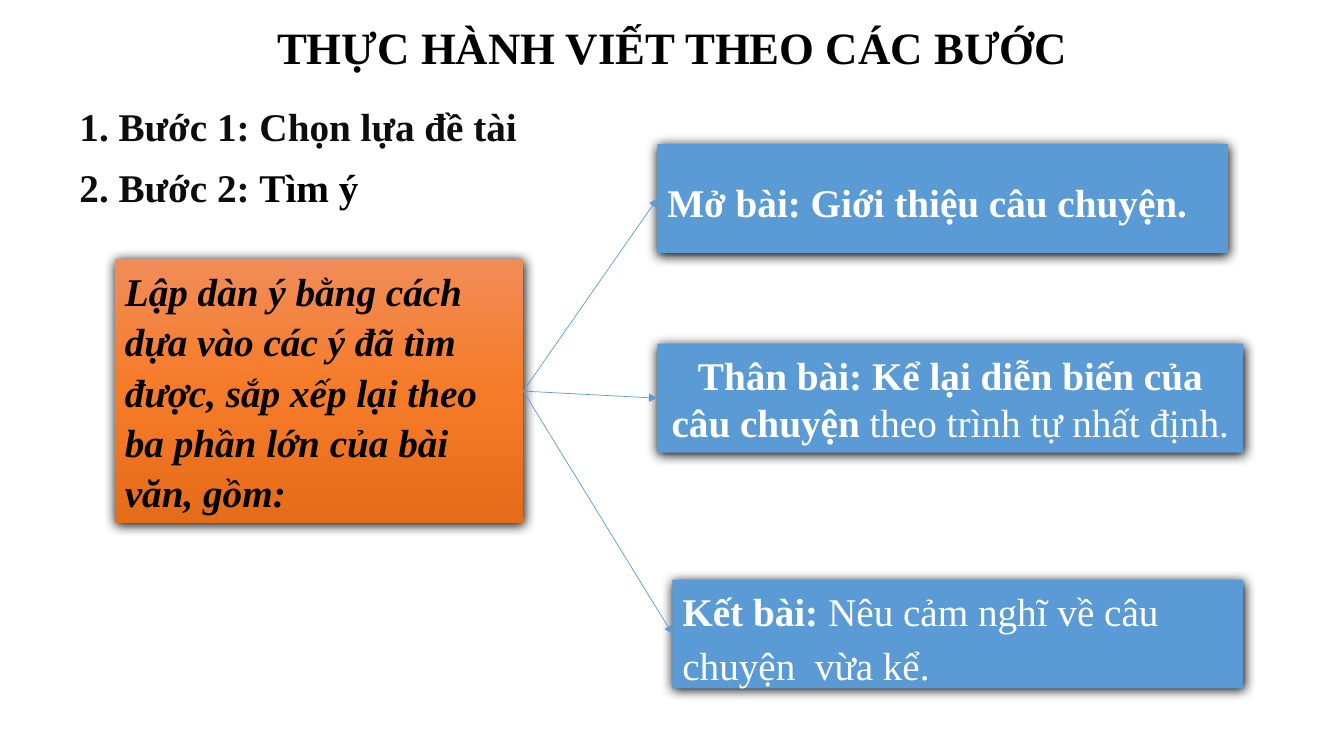
from lxml.etree import SubElement
from pptx import Presentation
from pptx.dml.color import RGBColor
from pptx.enum.shapes import MSO_CONNECTOR as Connector, MSO_SHAPE as Shape
from pptx.enum.text import MSO_ANCHOR as Anchor, MSO_AUTO_SIZE as AutoSize, PP_ALIGN as Align
from pptx.oxml.ns import qn
from pptx.util import Pt

PX = 9144
FONT = "Times New Roman"
BLACK, INK, WHITE, BLUE, ORANGE = "000000", "0D0D0D", "FFFFFF", "5B9BD5", "ED7D31"

TITLE = "THỰC HÀNH VIẾT THEO CÁC BƯỚC"
TITLE_AT = (261, 15, 812, 64)
STEPS = [
    [("1. Bước 1: Chọn lựa đề tài", True, INK)],
    [("2. Bước 2: ", True, INK), ("Tìm ý", True, BLACK)],
]
STEPS_AT = (69, 93, 667, 122)
OUTLINE = "Lập dàn ý bằng cách dựa vào các ý đã tìm được, sắp xếp lại theo ba phần lớn của bài văn, gồm:"
OUTLINE_AT = (114, 257, 405, 262)
OUTLINE_STOPS = [(0, "F18C57"), (50, "F67B28"), (100, "E56C19")]
PARTS = [
    ((652, 143, 566, 108), Align.LEFT, 1.15,
     [("Mở bài: Giới thiệu câu chuyện.", True, WHITE)]),
    ((652, 341, 581, 108), Align.CENTER, 1.0,
     [("Thân bài: Kể lại diễn biến của câu chuyện ", True, WHITE),
      ("theo trình tự nhất định. ", False, WHITE)]),
    ((667, 575, 566, 108), Align.LEFT, 1.15,
     [("Kết bài: ", True, WHITE), ("Nêu cảm nghĩ về câu chuyện  vừa kể.", False, WHITE)]),
]


def color(code):
    return RGBColor.from_string(code)


def emu(place):
    return [length * PX for length in place]


def node(parent, tag, **attributes):
    return SubElement(parent, qn(tag), {name: str(value) for name, value in attributes.items()})


def write(paragraph, pieces, size=28, align=Align.LEFT, spacing=1.0, after=0):
    paragraph.alignment = align
    paragraph.line_spacing = spacing
    paragraph.space_after = Pt(after)
    paragraph.font.name = FONT
    paragraph.font.size = Pt(size)
    bolds = {bold for _, bold, _ in pieces}
    inks = {ink for _, _, ink in pieces}
    if len(bolds) == 1:
        paragraph.font.bold = pieces[0][1]
    if len(inks) == 1:
        paragraph.font.color.rgb = color(pieces[0][2])
    for words, bold, ink in pieces:
        run = paragraph.add_run()
        run.text = words
        if len(bolds) > 1:
            run.font.bold = bold
        if len(inks) > 1:
            run.font.color.rgb = color(ink)


def add_box(slide, place):
    box = slide.shapes.add_shape(Shape.RECTANGLE, *emu(place))
    box.line.fill.background()
    box.shadow.inherit = False
    effects = box._element.spPr.find(qn("a:effectLst"))
    shade = node(effects, "a:outerShdw", blurRad=Pt(8.5), dist=Pt(1), dir=5400000,
                 algn="ctr", rotWithShape=0)
    node(shade, "a:srgbClr", val=BLACK)
    box.text_frame.word_wrap = True
    return box


def add_title(slide):
    title = slide.shapes.add_textbox(*emu(TITLE_AT)).text_frame
    title.word_wrap = False
    title.auto_size = AutoSize.SHAPE_TO_FIT_TEXT
    heading = title.paragraphs[0]
    write(heading, [(TITLE, True, BLACK)], size=32, align=Align.CENTER)
    edge = node(heading.runs[0]._r.get_or_add_rPr(), "a:ln", w=Pt(1.75))
    node(node(edge, "a:solidFill"), "a:srgbClr", val=ORANGE)


def add_steps(slide):
    steps = slide.shapes.add_textbox(*emu(STEPS_AT)).text_frame
    steps.word_wrap = True
    steps.auto_size = AutoSize.SHAPE_TO_FIT_TEXT
    for index, step in enumerate(STEPS):
        paragraph = steps.add_paragraph() if index else steps.paragraphs[0]
        write(paragraph, step, spacing=1.07, after=8)


def add_outline(slide):
    outline = add_box(slide, OUTLINE_AT)
    outline.fill.gradient()
    gradient = outline._element.spPr.find(qn("a:gradFill"))
    stops = gradient.find(qn("a:gsLst"))
    for stop in list(stops):
        stops.remove(stop)
    for percent, tint in OUTLINE_STOPS:
        node(node(stops, "a:gs", pos=percent * 1000), "a:srgbClr", val=tint)
    outline.fill.gradient_angle = 270
    outline.text_frame.auto_size = AutoSize.SHAPE_TO_FIT_TEXT
    outline.text_frame.vertical_anchor = Anchor.TOP
    paragraph = outline.text_frame.paragraphs[0]
    write(paragraph, [(OUTLINE, True, BLACK)], spacing=1.07, after=8)
    paragraph.font.italic = True
    return outline


def add_part(slide, place, align, spacing, pieces):
    part = add_box(slide, place)
    part.fill.solid()
    part.fill.fore_color.rgb = color(BLUE)
    part.text_frame.vertical_anchor = Anchor.MIDDLE
    write(part.text_frame.paragraphs[0], pieces, align=align, spacing=spacing)
    return part


def add_arrow(slide, outline, part):
    arrow = slide.shapes.add_connector(Connector.STRAIGHT, 0, 0, 0, 0)
    arrow.begin_connect(outline, 3)
    arrow.end_connect(part, 1)
    arrow.line.color.rgb = color(BLUE)
    arrow.line.width = Pt(0.5)
    node(arrow.line._get_or_add_ln(), "a:tailEnd", type="triangle")
    node(arrow._element.spPr, "a:effectLst")


def main():
    deck = Presentation()
    deck.slide_width, deck.slide_height = emu((1333, 750))
    slide = deck.slides.add_slide(deck.slide_layouts[6])
    add_title(slide)
    add_steps(slide)
    outline = add_outline(slide)
    parts = [add_part(slide, *part) for part in PARTS]
    for part in parts:
        add_arrow(slide, outline, part)
    deck.save("out.pptx")


if __name__ == "__main__":
    main()
